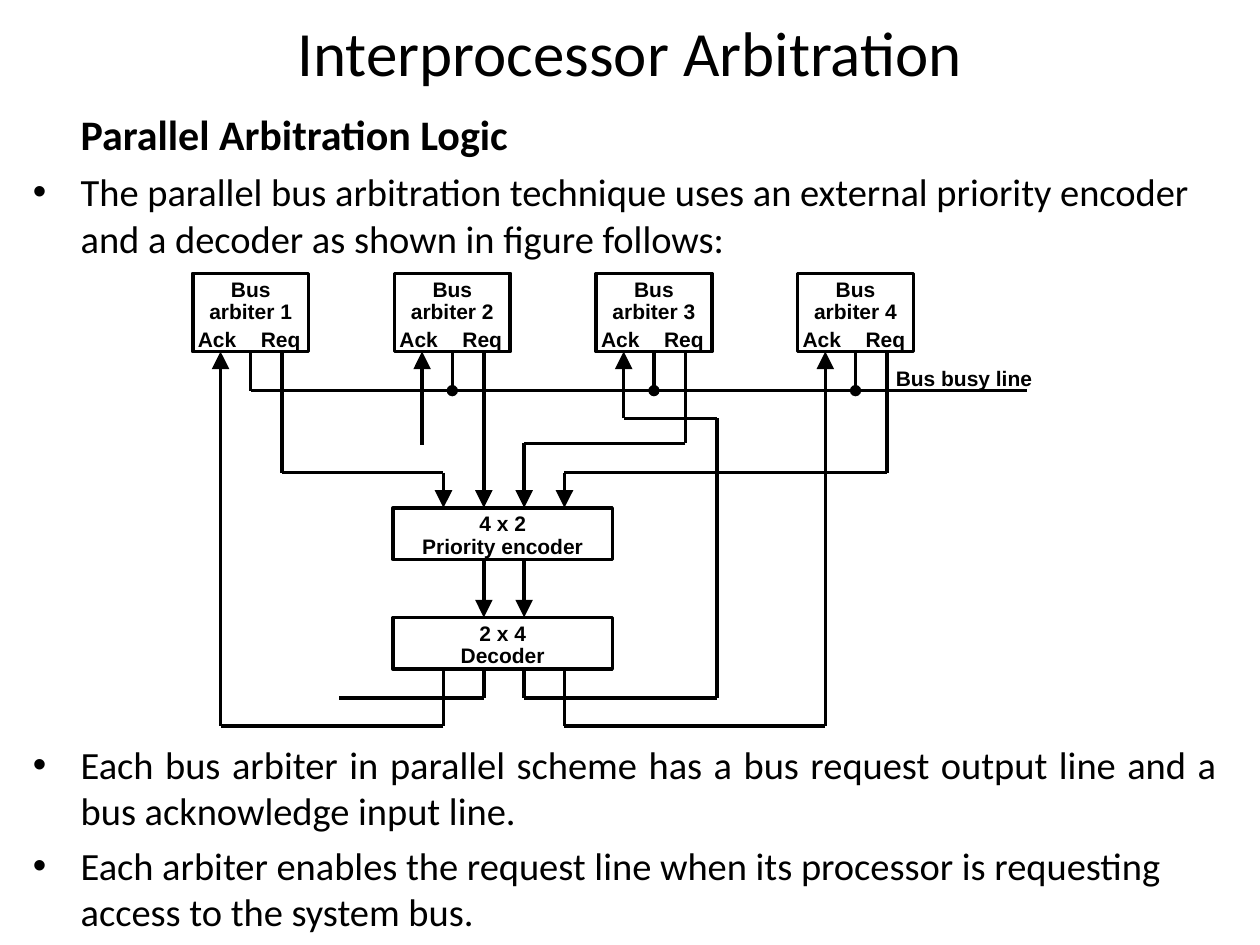
from itertools import pairwise

from lxml import etree
from pptx import Presentation
from pptx import util as u
from pptx.dml.color import RGBColor
from pptx.enum import shapes, text
from pptx.oxml import ns

BLACK = RGBColor(0, 0, 0)
CENTER = text.PP_ALIGN.CENTER
BOTTOM = 2

# Arbiters, and the offsets of their pins from the left side
ARBITER_LEFTS = [1.53 + 1.6 * i for i in range(4)]
ARBITER_TOP, ARBITER_BOTTOM, ARBITER_WIDTH = 2.17, 2.79, 0.92
ACK, BUSY, REQ = 0.22, ARBITER_WIDTH / 2, 0.71
# Encoder and decoder share their left side, size and pin columns
UNIT_LEFT, UNIT_WIDTH, UNIT_HEIGHT = 3.12, 1.74, 0.41
ENCODER_TOP, DECODER_TOP = 4.03, 4.9
PINS = [3.52 + 0.32 * i for i in range(4)]
BUSY_Y = 3.1


def write(frame, content, size=12, font="Arial", bold=False, align=None, first=False,
          before=0, line=None, indent=0, bullet=False, tab=None):
    """Add one paragraph; first=True fills the one the frame already has."""
    para = frame.paragraphs[0] if first else frame.add_paragraph()
    para.text = content
    props = para._p.get_or_add_pPr()
    if indent:
        props.set("marL", str(u.Inches(indent)))
        props.set("indent", str(u.Inches(-0.38 if bullet else 0)))
    if bullet:
        etree.SubElement(props, ns.qn("a:buFont"), typeface="Arial")
        etree.SubElement(props, ns.qn("a:buChar"), char="•")
    if tab:
        stops = etree.SubElement(props, ns.qn("a:tabLst"))
        etree.SubElement(stops, ns.qn("a:tab"), pos=str(u.Inches(tab)), algn="l")
    if align is not None:
        para.alignment = align
    if before:
        para.space_before = u.Pt(before)
    if line:
        para.line_spacing = u.Pt(line)
    for span in para.runs:
        span.font.size = u.Pt(size)
        span.font.name = font
        span.font.bold = bold
        span.font.color.rgb = BLACK


class Diagram:
    """Holds the page and the line style shared by its elements."""

    def __init__(self, page, line_width=2):
        self.page = page
        self.line_width = u.Pt(line_width)

    def text_box(self, left, top, width, height):
        box = self.page.shapes.add_textbox(*map(u.Inches, (left, top, width, height)))
        return self.prepare(box.text_frame)

    def prepare(self, frame, side=0, top=0):
        frame.word_wrap = True
        frame.vertical_anchor = text.MSO_ANCHOR.TOP
        frame.margin_left = frame.margin_right = u.Inches(side)
        frame.margin_top, frame.margin_bottom = u.Inches(top), 0
        return frame

    def block(self, left, top, width, height):
        box = self.page.shapes.add_shape(
            shapes.MSO_SHAPE.RECTANGLE, *map(u.Inches, (left, top, width, height)))
        box.shadow.inherit = False
        box.fill.background()
        box.line.color.rgb = BLACK
        box.line.width = self.line_width
        self.prepare(box.text_frame, side=0.04, top=0.05)
        return box

    def dot(self, x, y, size=0.09):
        mark = self.page.shapes.add_shape(
            shapes.MSO_SHAPE.OVAL,
            *map(u.Inches, (x - size / 2, y - size / 2, size, size)))
        mark.shadow.inherit = False
        mark.fill.solid()
        mark.fill.fore_color.rgb = BLACK
        mark.line.fill.background()

    def wire(self, *points, arrow=False, start=None):
        """Join points with straight lines; start is a block left at its bottom middle."""
        lines = []
        for begin, end in pairwise(points):
            line = self.page.shapes.add_connector(
                shapes.MSO_CONNECTOR.STRAIGHT, *map(u.Inches, begin + end))
            line.line.color.rgb = BLACK
            line.line.width = self.line_width
            etree.SubElement(line._element.spPr, ns.qn("a:effectLst"))
            lines.append(line)
        if start is not None:
            lines[0].begin_connect(start, BOTTOM)
        if arrow:
            etree.SubElement(lines[-1].line._get_or_add_ln(), ns.qn("a:tailEnd"),
                             type="triangle", w="lg", len="lg")


def add_words(diagram):
    body = dict(size=22, font="Calibri", indent=0.39, bullet=True)

    title = diagram.text_box(1.55, 0.11, 6.9, 0.6)
    write(title, "Interprocessor Arbitration", size=36, font="Calibri",
          align=CENTER, first=True)

    intro = diagram.text_box(0.25, 0.86, 9.41, 1.21)
    write(intro, "Parallel Arbitration Logic", size=24, font="Calibri", bold=True,
          indent=0.39, first=True)
    write(intro, "The parallel bus arbitration technique uses an external priority "
          "encoder and a decoder as shown in figure follows:", before=5.5, **body)

    notes = diagram.text_box(0.25, 5.88, 9.41, 1.57)
    write(notes, "Each bus arbiter in parallel scheme has a bus request output line "
          "and a bus acknowledge input line.", align=text.PP_ALIGN.JUSTIFY,
          first=True, **body)
    write(notes, "Each arbiter enables the request line when its processor is "
          "requesting access to the system bus.", before=5.2, **body)

    label = diagram.text_box(7.11, 2.9, 1.2, 0.21)
    write(label, "Bus busy line", bold=True, first=True)


def add_units(diagram):
    for number, left in enumerate(ARBITER_LEFTS, 1):
        box = diagram.block(left, ARBITER_TOP, ARBITER_WIDTH, ARBITER_BOTTOM - ARBITER_TOP)
        frame = box.text_frame
        write(frame, f"Bus\varbiter {number}", bold=True, align=CENTER, line=12.7, first=True)
        write(frame, "Ack\tReq", bold=True, align=text.PP_ALIGN.LEFT, before=1.4, tab=0.5)
        middle = left + BUSY
        diagram.wire((middle, ARBITER_BOTTOM), (middle, BUSY_Y), start=box)
        if number > 1:
            diagram.dot(middle, BUSY_Y)
    diagram.wire((ARBITER_LEFTS[0] + BUSY, BUSY_Y), (8.15, BUSY_Y))

    for top, name in (ENCODER_TOP, "4 x 2\vPriority encoder"), (DECODER_TOP, "2 x 4\vDecoder"):
        box = diagram.block(UNIT_LEFT, top, UNIT_WIDTH, UNIT_HEIGHT)
        write(box.text_frame, name, bold=True, align=CENTER, line=12.7, first=True)


def add_wires(diagram):
    acks = [(left + ACK, ARBITER_BOTTOM) for left in ARBITER_LEFTS]
    requests = [(left + REQ, ARBITER_BOTTOM) for left in ARBITER_LEFTS]
    inputs = [(x, ENCODER_TOP) for x in PINS]
    outputs = [(x, DECODER_TOP + UNIT_HEIGHT) for x in PINS]

    for request, pin, bend in zip(requests, inputs, (3.75, None, 3.52, 3.75)):
        corners = [(request[0], bend), (pin[0], bend)] if bend else []
        diagram.wire(request, *corners, pin, arrow=True)

    for x in PINS[1:3]:
        diagram.wire((x, ENCODER_TOP + UNIT_HEIGHT), (x, DECODER_TOP), arrow=True)

    inner, outer = 5.54, 5.76
    for i in (0, 3):
        diagram.wire(outputs[i], (PINS[i], outer), (acks[i][0], outer), acks[i], arrow=True)
    # The second acknowledge line is left open between its two ends
    diagram.wire(outputs[1], (PINS[1], inner), (2.69, inner))
    diagram.wire((acks[1][0], 3.53), acks[1], arrow=True)
    diagram.wire(outputs[2], (PINS[2], inner), (5.69, inner), (5.69, 3.32),
                 (acks[2][0], 3.32), acks[2], arrow=True)


def main():
    deck = Presentation()
    deck.slide_width, deck.slide_height = u.Inches(10), u.Inches(7.5)
    diagram = Diagram(deck.slides.add_slide(deck.slide_layouts[6]))
    add_words(diagram)
    add_units(diagram)
    add_wires(diagram)
    deck.save("out.pptx")


if __name__ == "__main__":
    main()
